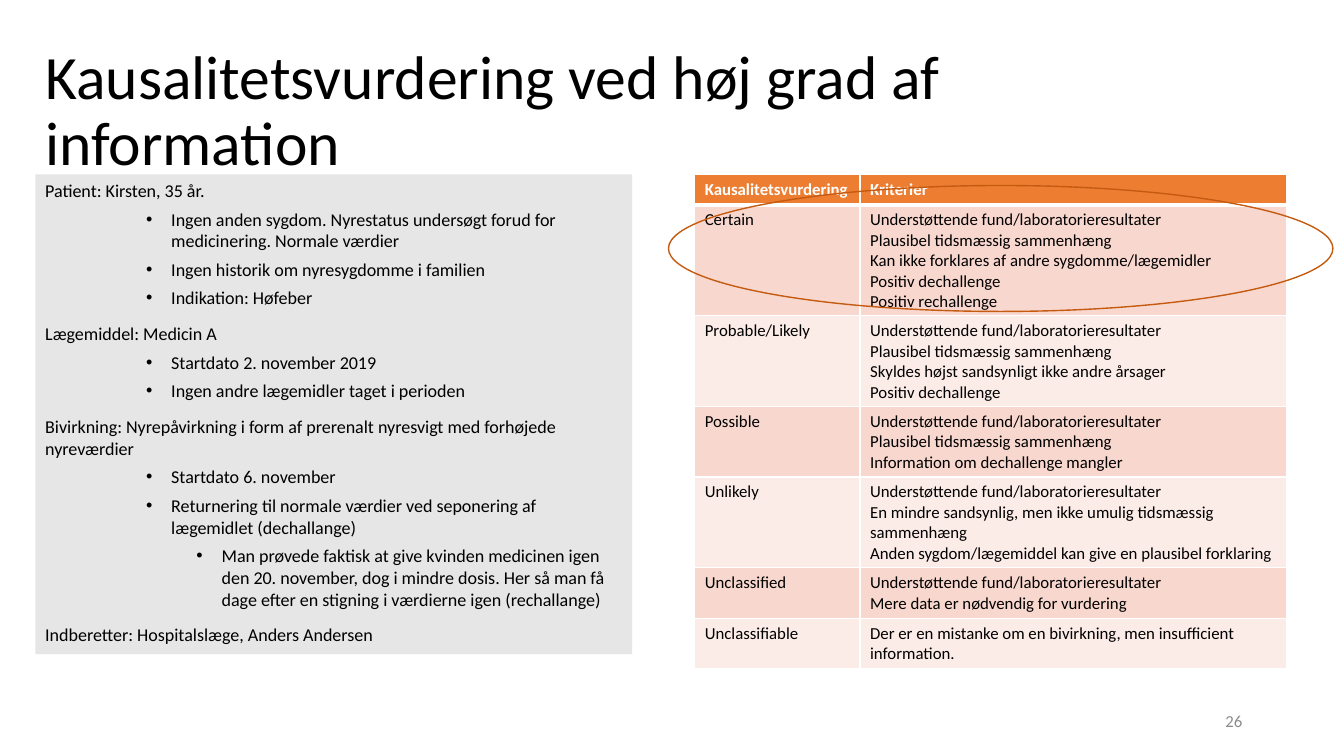
from dataclasses import dataclass

from lxml import etree
from pptx import Presentation
from pptx.dml.color import RGBColor
from pptx.enum.shapes import MSO_SHAPE
from pptx.enum.text import MSO_ANCHOR, PP_ALIGN
from pptx.oxml.ns import qn
from pptx.util import Inches, Pt

RECT, OVAL = MSO_SHAPE.RECTANGLE, MSO_SHAPE.OVAL
TOP, MIDDLE = MSO_ANCHOR.TOP, MSO_ANCHOR.MIDDLE
LEFT, RIGHT = PP_ALIGN.LEFT, PP_ALIGN.RIGHT


@dataclass(frozen=True)
class Theme:
    font: str = "Calibri"
    ink: str = "000000"
    white: str = "FFFFFF"
    muted: str = "8C8C8C"
    panel: str = "E7E6E6"
    head: str = "ED7D31"
    bands: tuple = ("F8D7CE", "FCECE8")
    ring: str = "C55A11"
    title: float = 44
    body: float = 12.9
    small: float = 12


THEME = Theme()

# Case notes: (indent level, text)
NOTES = [
    (0, "Patient: Kirsten, 35 år."),
    (1, "Ingen anden sygdom. Nyrestatus undersøgt forud for medicinering. "
        "Normale værdier"),
    (1, "Ingen historik om nyresygdomme i familien"),
    (1, "Indikation: Høfeber"),
    (0, "Lægemiddel: Medicin A"),
    (1, "Startdato 2. november 2019"),
    (1, "Ingen andre lægemidler taget i perioden"),
    (0, "Bivirkning: Nyrepåvirkning i form af prerenalt nyresvigt med "
        "forhøjede nyreværdier"),
    (1, "Startdato 6. november"),
    (1, "Returnering til normale værdier ved seponering af lægemidlet "
        "(dechallange)"),
    (2, "Man prøvede faktisk at give kvinden medicinen igen den 20. november, "
        "dog i mindre dosis. Her så man få dage efter en stigning i værdierne "
        "igen (rechallange)"),
    (0, "Indberetter: Hospitalslæge, Anders Andersen"),
]

# Criteria: (grade, lines of height, criteria)
FOUND = "Understøttende fund/laboratorieresultater"
TIMING = "Plausibel tidsmæssig sammenhæng"
GRADES = [
    ("Kausalitetsvurdering", 1, ["Kriterier"]),
    ("Certain", 5, [FOUND, TIMING,
                    "Kan ikke forklares af andre sygdomme/lægemidler",
                    "Positiv dechallenge", "Positiv rechallenge"]),
    ("Probable/Likely", 4, [FOUND, TIMING,
                            "Skyldes højst sandsynligt ikke andre årsager",
                            "Positiv dechallenge"]),
    ("Possible", 3, [FOUND, TIMING, "Information om dechallenge mangler"]),
    ("Unlikely", 4, [FOUND,
                     "En mindre sandsynlig, men ikke umulig tidsmæssig "
                     "sammenhæng",
                     "Anden sygdom/lægemiddel kan give en plausibel "
                     "forklaring"]),
    ("Unclassified", 2, [FOUND, "Mere data er nødvendig for vurdering"]),
    ("Unclassifiable", 2, ["Der er en mistanke om en bivirkning, men "
                           "insufficient information."]),
]


def place(*box):
    return [Inches(side) for side in box]


def color(code):
    return RGBColor.from_string(code)


def style(para, size, ink, bold=False):
    for run in para.runs:
        font = run.font
        font.name, font.size, font.bold = THEME.font, Pt(size), bold
        font.color.rgb = color(ink)


def add_label(slide, box, text, size, ink, align=LEFT, space=None):
    frame = slide.shapes.add_textbox(*place(*box)).text_frame
    frame.word_wrap = True
    frame.vertical_anchor = MIDDLE
    frame.text = text
    para = frame.paragraphs[0]
    para.alignment, para.line_spacing = align, space
    style(para, size, ink)


def add_bullet(para, level):
    props = para._p.get_or_add_pPr()
    props.set("marL", str(Inches(0.75 + 0.5 * level)))
    props.set("indent", str(Inches(-0.25)))
    etree.SubElement(props, qn("a:buFont"), typeface="Arial")
    etree.SubElement(props, qn("a:buChar"), char="•")
    para.level = level


def add_notes(slide, box):
    panel = slide.shapes.add_shape(RECT, *place(*box))
    panel.shadow.inherit = False
    panel.fill.solid()
    panel.fill.fore_color.rgb = color(THEME.panel)
    panel.line.fill.background()
    frame = panel.text_frame
    frame.word_wrap = True
    frame.vertical_anchor = TOP
    frame.text = "\n".join(text for _, text in NOTES)
    for row, (para, (level, _)) in enumerate(zip(frame.paragraphs, NOTES)):
        if level:
            add_bullet(para, level)
        para.alignment = LEFT
        if row:
            para.space_before = Pt(5 if level else 10)
        style(para, THEME.body, THEME.ink)


def add_edges(cell, base):
    props = cell._tc.get_or_add_tcPr()
    for side, width in (("L", 1), ("R", 1), ("T", 1), ("B", base)):
        edge = etree.SubElement(props, qn(f"a:ln{side}"), w=str(Pt(width)))
        fill = etree.SubElement(edge, qn("a:solidFill"))
        etree.SubElement(fill, qn("a:srgbClr"), val=THEME.white)


def fill_cell(cell, text, row):
    head = row == 0
    add_edges(cell, 3 if head else 1)
    cell.fill.solid()
    cell.fill.fore_color.rgb = color(
        THEME.head if head else THEME.bands[(row - 1) % 2])
    cell.text_frame.text = text
    for para in cell.text_frame.paragraphs:
        style(para, THEME.small, THEME.white if head else THEME.ink, head)


def add_grades(slide, box):
    grid = slide.shapes.add_table(len(GRADES), 2, *place(*box)).table
    for col, width in zip(grid.columns, (1.64, 4.23)):
        col.width = Inches(width)
    for row, (grade, lines, rules) in enumerate(GRADES):
        grid.rows[row].height = Inches(0.1 + 0.2 * lines)
        fill_cell(grid.cell(row, 0), grade, row)
        fill_cell(grid.cell(row, 1), "\n".join(rules), row)


def add_ring(slide, box):
    ring = slide.shapes.add_shape(OVAL, *place(*box))
    ring.shadow.inherit = False
    ring.fill.background()
    ring.line.color.rgb = color(THEME.ring)
    ring.line.width = Pt(1)


def main():
    deck = Presentation()
    deck.slide_width, deck.slide_height = place(13.33, 7.5)
    slide = deck.slides.add_slide(deck.slide_layouts[6])

    # Title and page number
    add_label(slide, (0.35, 0.39, 11.5, 1.45),
              "Kausalitetsvurdering ved høj grad af information",
              THEME.title, THEME.ink, space=0.9)
    add_label(slide, (9.42, 6.95, 3, 0.4), "26", THEME.small, THEME.muted,
              RIGHT)

    # Case on the left, criteria on the right
    add_notes(slide, (0.35, 1.73, 5.92, 4.76))
    add_grades(slide, (6.89, 1.73, 5.87, 4.9))

    # Ring around the chosen grade
    add_ring(slide, (6.63, 1.84, 6.59, 1.25))
    deck.save("out.pptx")


if __name__ == "__main__":
    main()
